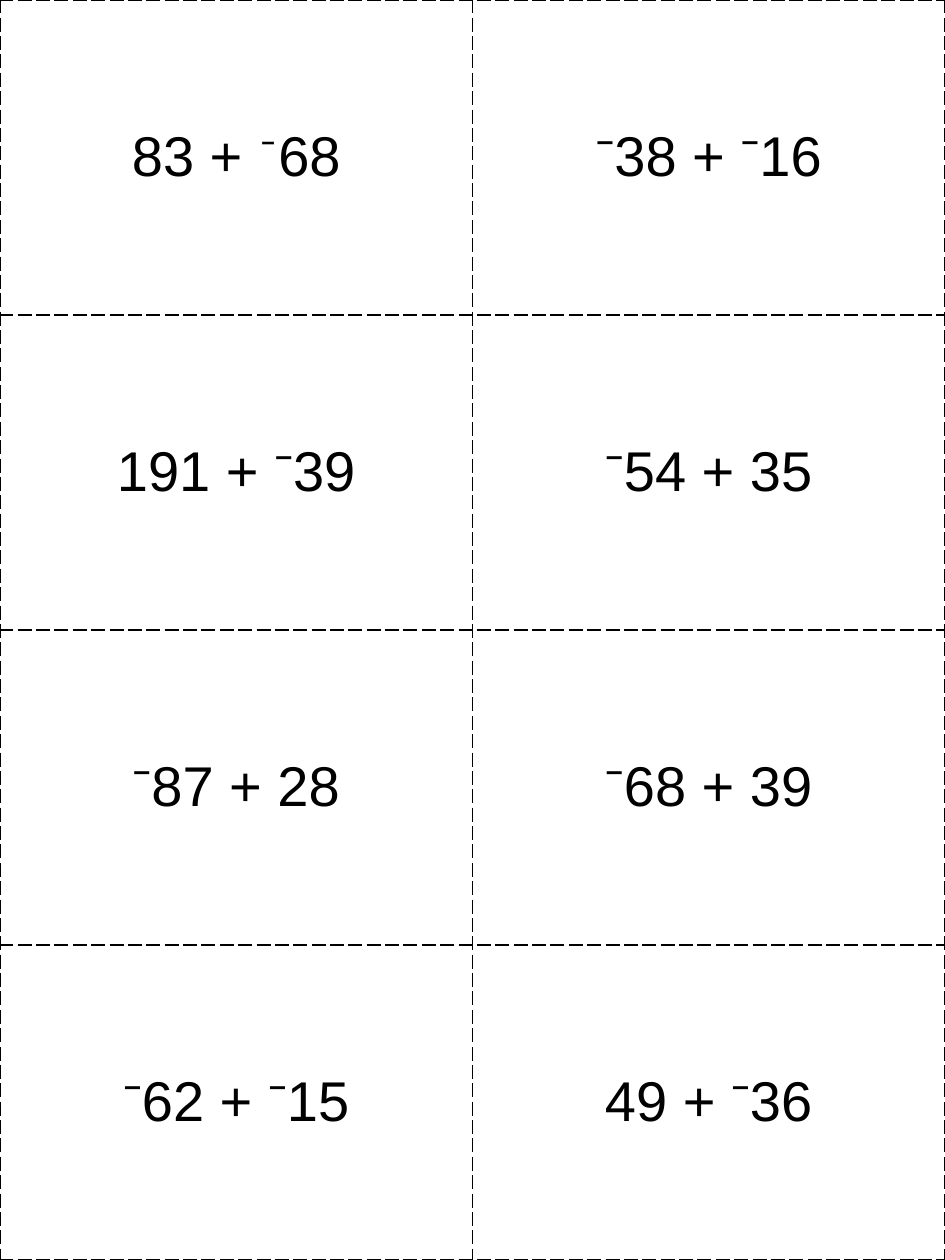
from dataclasses import dataclass

import pptx
import pptx.dml.color
import pptx.enum.text
import pptx.oxml
import pptx.oxml.ns
import pptx.util

EMU_PER_PX = 9525
COLUMNS, ROWS = 2, 4
CARD_WIDTH, CARD_HEIGHT = 360, 240
INK = "000000"
BORDER_POINTS = 1


@dataclass(frozen=True)
class Span:
    """A stretch of text in one font."""

    text: str
    font: str = "Arial"


@dataclass(frozen=True)
class Card:
    """One sum to be cut out."""

    spans: tuple[Span, ...]


CARDS = [
    Card((Span("83 + "), Span("⁻", "Calibri"), Span("68"))),
    *(
        Card((Span(text),))
        for text in (
            "⁻38 + ⁻16",
            "191 + ⁻39",
            "⁻54 + 35",
            "⁻87 + 28",
            "⁻68 + 39",
            "⁻62 + ⁻15",
            "49 + ⁻36",
        )
    ),
]


def px(length: int) -> pptx.util.Emu:
    """Turn pixels into EMU."""
    return pptx.util.Emu(length * EMU_PER_PX)


def color(value: str) -> pptx.dml.color.RGBColor:
    """Turn a hex string into a colour."""
    return pptx.dml.color.RGBColor.from_string(value)


def draw_borders(cell) -> None:
    """Give a cell a dashed cutting line on all four sides."""
    properties = cell._tc.get_or_add_tcPr()
    width = pptx.util.Pt(BORDER_POINTS)
    for position, side in enumerate("LRTB"):
        line = pptx.oxml.parse_xml(
            f'<a:ln{side} {pptx.oxml.ns.nsdecls("a")} w="{width}">'
            f'<a:solidFill><a:srgbClr val="{INK}"/></a:solidFill>'
            f'<a:prstDash val="lgDash"/></a:ln{side}>'
        )
        properties.insert(position, line)


def draw_card(cell, card: Card) -> None:
    """Write a card's sum in the middle of its cell."""
    cell.fill.background()
    cell.vertical_anchor = pptx.enum.text.MSO_ANCHOR.MIDDLE
    draw_borders(cell)
    para = cell.text_frame.paragraphs[0]
    para.alignment = pptx.enum.text.PP_ALIGN.CENTER
    for span in card.spans:
        run = para.add_run()
        run.text = span.text
        run.font.color.rgb = color(INK)
        text_format = {"name": span.font, "size": pptx.util.Pt(32), "bold": False}
        for name, value in text_format.items():
            setattr(run.font, name, value)


def main() -> None:
    """Build the sheet of sum cards."""
    deck = pptx.Presentation()
    deck.slide_width = px(COLUMNS * CARD_WIDTH)
    deck.slide_height = px(ROWS * CARD_HEIGHT)
    page = deck.slides.add_slide(deck.slide_layouts[6])
    table = page.shapes.add_table(
        ROWS, COLUMNS, 0, 0, deck.slide_width, deck.slide_height
    ).table
    table_format = {"first_row": False, "horz_banding": False}
    for name, value in table_format.items():
        setattr(table, name, value)
    for cell, card in zip(table.iter_cells(), CARDS):
        draw_card(cell, card)
    deck.save("out.pptx")


if __name__ == "__main__":
    main()
